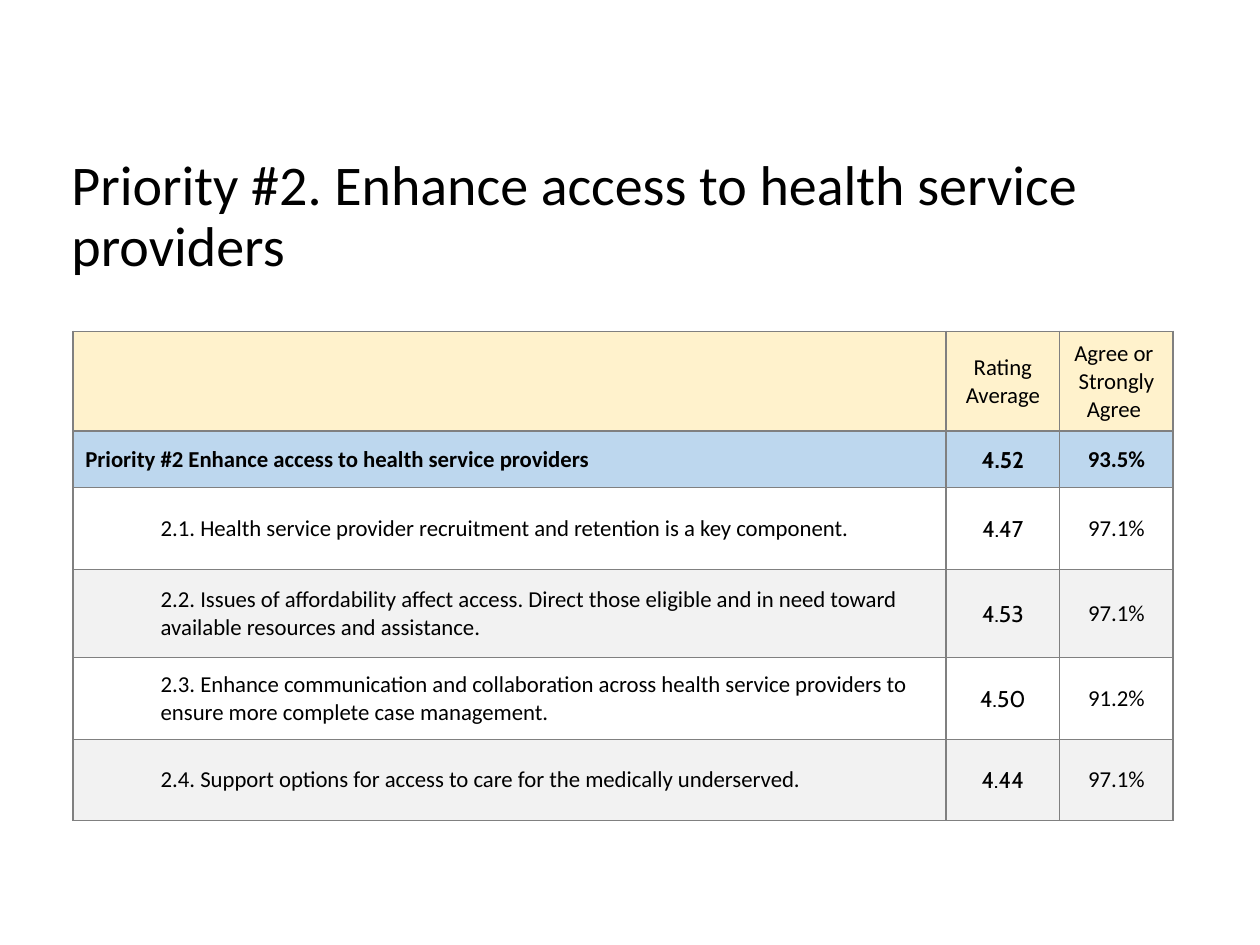
from lxml import etree
from pptx import Presentation
from pptx import util as u
from pptx.dml.color import RGBColor
from pptx.enum import text
from pptx.oxml import ns

BLACK = RGBColor(0, 0, 0)
WHITE = RGBColor(255, 255, 255)
CREAM = RGBColor(0xFF, 0xF2, 0xCC)
BLUE = RGBColor(0xBD, 0xD7, 0xEE)
PALE = RGBColor(0xF2, 0xF2, 0xF2)
GRAY = RGBColor(0x80, 0x80, 0x80)

TITLE = "Priority #2. Enhance access to health service providers"
COLUMNS = (17.6, 2.29, 2.29)
HEADER = ("", "Rating Average", "Agree or \nStrongly Agree ")
RATINGS = (
    ("Priority #2 Enhance access to health service providers", "4.52", "93.5%"),
    ("2.1. Health service provider recruitment and retention is a key component.",
     "4.47", "97.1%"),
    ("2.2. Issues of affordability affect access. Direct those eligible and in need "
     "toward available resources and assistance.", "4.53", "97.1%"),
    ("2.3. Enhance communication and collaboration across health service providers to "
     "ensure more complete case management.", "4.50", "91.2%"),
    ("2.4. Support options for access to care for the medically underserved.",
     "4.44", "97.1%"),
)
HEIGHTS = (2.01, 1.14, 1.65, 1.78, 1.65, 1.63)


class SlideBuilder:
    font = "Calibri"
    number_font = "Cabin"
    title_size = 32
    table_size = 13

    def __init__(self, slide):
        self.slide = slide

    def add_span(self, para, words, size, font=None, bold=False):
        span = para.add_run()
        span.text = words
        span.font.name = font or self.font
        span.font.size = u.Pt(size)
        span.font.bold = bold
        span.font.color.rgb = BLACK

    def add_title(self, words, left, top, width, height):
        box = self.slide.shapes.add_textbox(
            u.Cm(left), u.Cm(top), u.Cm(width), u.Cm(height))
        frame = box.text_frame
        frame.word_wrap = True
        frame.margin_top = u.Cm(0.2)
        para = frame.paragraphs[0]
        para.line_spacing = 0.9
        self.add_span(para, words, self.title_size)

    def add_borders(self, cell):
        properties = cell._tc.get_or_add_tcPr()
        for index, side in enumerate(("lnL", "lnR", "lnT", "lnB")):
            line = etree.Element(ns.qn(f"a:{side}"), w=str(u.Pt(1)))
            fill = etree.SubElement(line, ns.qn("a:solidFill"))
            etree.SubElement(fill, ns.qn("a:srgbClr"), val=str(GRAY))
            properties.insert(index, line)

    def style_cell(self, cell, fill, margin):
        cell.fill.solid()
        cell.fill.fore_color.rgb = fill
        cell.vertical_anchor = text.MSO_ANCHOR.MIDDLE
        cell.margin_left = cell.margin_right = cell.margin_top = u.Cm(margin)
        cell.margin_bottom = u.Cm(margin if margin > 0.1 else 0)
        self.add_borders(cell)

    def fill_cell(self, cell, words, font, bold, centered, indent):
        frame = cell.text_frame
        for index, line in enumerate(words.split("\n")):
            para = frame.add_paragraph() if index else frame.paragraphs[0]
            if centered:
                para.alignment = text.PP_ALIGN.CENTER
            if indent:
                para._p.get_or_add_pPr().set("marL", str(u.Cm(indent)))
            if line:
                self.add_span(para, line, self.table_size, font, bold)

    def add_rating_table(self, left, top):
        rows = (HEADER,) + RATINGS
        table = self.slide.shapes.add_table(
            len(rows), len(COLUMNS), u.Cm(left), u.Cm(top),
            u.Cm(sum(COLUMNS)), u.Cm(sum(HEIGHTS))).table
        table.first_row = table.horz_banding = False
        for column, width in zip(table.columns, COLUMNS):
            column.width = u.Cm(width)
        for r, (values, height) in enumerate(zip(rows, HEIGHTS)):
            table.rows[r].height = u.Cm(height)
            fill = (CREAM, BLUE)[r] if r < 2 else (WHITE, PALE)[r % 2]
            for c, words in enumerate(values):
                cell = table.cell(r, c)
                self.style_cell(cell, fill, 0.03 if r == 0 or c == 1 else 0.25)
                font = self.number_font if r and c == 1 else self.font
                indent = 1.52 if r > 1 and c == 0 else 0
                self.fill_cell(cell, words, font, r == 1, c > 0, indent)


def main():
    deck = Presentation()
    deck.slide_width = u.Cm(25.4)
    deck.slide_height = u.Cm(19.05)
    page = SlideBuilder(deck.slides.add_slide(deck.slide_layouts[6]))
    page.add_rating_table(1.47, 6.68)
    page.add_title(TITLE, 1.19, 2.97, 22.68, 3.12)
    deck.save("out.pptx")


if __name__ == "__main__":
    main()
